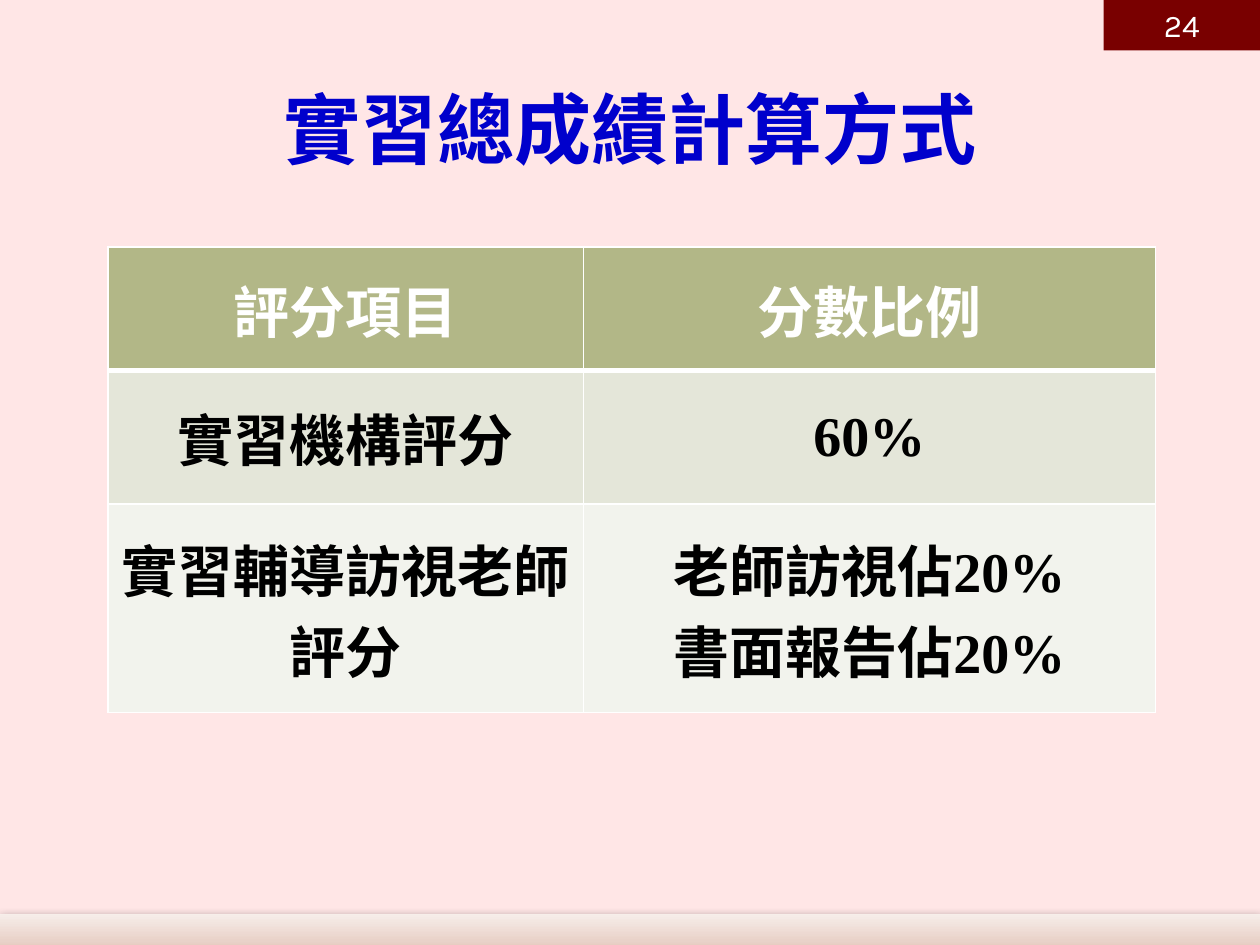
from pptx import Presentation
from pptx.dml.color import RGBColor
from pptx.enum.shapes import MSO_SHAPE
from pptx.enum.text import MSO_ANCHOR, PP_ALIGN
from pptx.oxml import parse_xml
from pptx.oxml.ns import nsdecls
from pptx.util import Cm, Pt

RECT = MSO_SHAPE.RECTANGLE
MIDDLE = MSO_ANCHOR.MIDDLE
CENTER = PP_ALIGN.CENTER

PINK = RGBColor(0xFF, 0xE6, 0xE6)
BLUE = RGBColor(0x00, 0x00, 0xCC)
MAROON = RGBColor(0x79, 0x00, 0x00)
WHITE = RGBColor(0xFF, 0xFF, 0xFF)
BLACK = RGBColor(0x00, 0x00, 0x00)
OLIVE = RGBColor(0xB2, 0xB7, 0x87)
SAGE = RGBColor(0xE4, 0xE6, 0xD9)
MIST = RGBColor(0xF2, 0xF3, 0xED)
SAND = RGBColor(0xE2, 0xBF, 0xB1)
ROSE = RGBColor(0xE9, 0xD2, 0xC9)
CREAM = RGBColor(0xF7, 0xEE, 0xEA)

# Each row: height in cm, fill, text colour, cells as lists of lines
ROWS = [
    (2.49, OLIVE, WHITE, [["評分項目"], ["分數比例"]]),
    (2.69, SAGE, BLACK, [["實習機構評分"], ["60%"]]),
    (4.2, MIST, BLACK, [["實習輔導訪視老師評分"],
                        ["老師訪視佔20%", "書面報告佔20%"]]),
]
COLS = [9.58, 11.53]


def write(frame, lines, font, size, color, bold=False):
    """Fill a text frame with centred lines, one run each."""
    frame.word_wrap = True
    for i, line in enumerate(lines):
        para = frame.add_paragraph() if i else frame.paragraphs[0]
        para.alignment = CENTER
        run = para.add_run()
        run.text = line
        run.font.name = font
        run.font.size = Pt(size)
        run.font.bold = bold
        run.font.color.rgb = color


def add_rect(slide, left, top, width, height):
    rect = slide.shapes.add_shape(RECT, Cm(left), Cm(top), Cm(width), Cm(height))
    rect.shadow.inherit = False
    rect.line.fill.background()
    return rect


def add_band(slide, left, top, width, height):
    """Bottom band: upward gradient and a soft shadow."""
    band = add_rect(slide, left, top, width, height)
    stops = "".join(
        f'<a:gs pos="{pos * 1000}"><a:srgbClr val="{color}"/></a:gs>'
        for pos, color in [(0, SAND), (35, ROSE), (100, CREAM)])
    props = band._element.spPr
    props.insert(2, parse_xml(
        f'<a:gradFill {nsdecls("a")}><a:gsLst>{stops}</a:gsLst>'
        '<a:lin ang="16200000" scaled="0"/></a:gradFill>'))
    props[-1].append(parse_xml(
        f'<a:outerShdw {nsdecls("a")} blurRad="{Pt(5)}" dist="{Pt(1.6)}" '
        'dir="5400000" rotWithShape="0"><a:srgbClr val="000000">'
        '<a:alpha val="38000"/></a:srgbClr></a:outerShdw>'))


def add_title(slide, left, top, width, height):
    box = slide.shapes.add_textbox(Cm(left), Cm(top), Cm(width), Cm(height))
    box.text_frame.vertical_anchor = MIDDLE
    write(box.text_frame, ["實習總成績計算方式"], "Arial", 44, BLUE, True)


def add_page(slide, left, top, width, height):
    """Page number tab in the corner."""
    tab = add_rect(slide, left, top, width, height)
    tab.fill.solid()
    tab.fill.fore_color.rgb = MAROON
    tab.text_frame.vertical_anchor = MIDDLE
    write(tab.text_frame, ["24"], "Karla", 18, WHITE)


def set_edges(cell, top, bottom):
    """White cell borders, 1 pt at the sides."""
    props = cell._tc.get_or_add_tcPr()
    for i, (side, width) in enumerate(zip("LRTB", (1, 1, top, bottom))):
        props.insert(i, parse_xml(
            f'<a:ln{side} {nsdecls("a")} w="{Pt(width)}"><a:solidFill>'
            f'<a:srgbClr val="{WHITE}"/></a:solidFill></a:ln{side}>'))


def add_scores(slide, left, top):
    """Score table; the rule below the header is thicker."""
    width, height = sum(COLS), sum(row[0] for row in ROWS)
    table = slide.shapes.add_table(len(ROWS), len(COLS), Cm(left), Cm(top),
                                   Cm(width), Cm(height)).table
    table.horz_banding = False
    for col, size in zip(table.columns, COLS):
        col.width = Cm(size)
    for r, (tall, fill, color, cells) in enumerate(ROWS):
        table.rows[r].height = Cm(tall)
        for c, lines in enumerate(cells):
            cell = table.cell(r, c)
            cell.vertical_anchor = MIDDLE
            cell.fill.solid()
            cell.fill.fore_color.rgb = fill
            set_edges(cell, 3 if r == 1 else 1, 3 if r == 0 else 1)
            write(cell.text_frame, lines, "Times New Roman", 32, color, True)


def main():
    deck = Presentation()
    deck.slide_width, deck.slide_height = Cm(25.4), Cm(19.05)
    slide = deck.slides.add_slide(deck.slide_layouts[6])
    slide.background.fill.solid()
    slide.background.fill.fore_color.rgb = PINK
    add_band(slide, 0, 18.42, 25.4, 0.84)
    add_title(slide, 1.27, 0.99, 22.86, 3.18)
    add_scores(slide, 2.18, 4.98)
    add_page(slide, 22.25, 0, 3.15, 1.02)
    deck.save("out.pptx")


if __name__ == "__main__":
    main()
